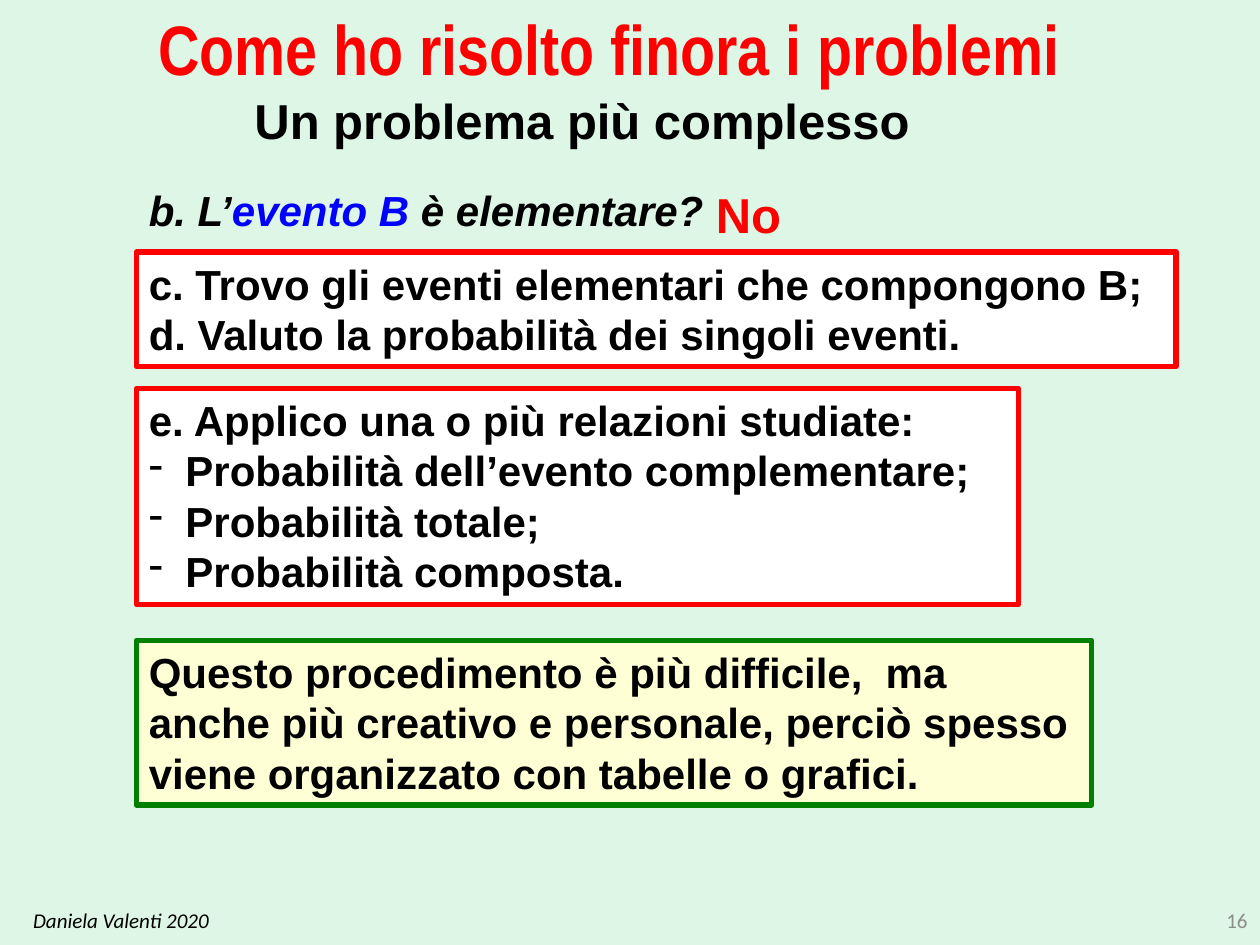
from lxml import etree
from pptx import Presentation
from pptx.dml.color import RGBColor
from pptx.enum import shapes, text
from pptx.oxml import ns
from pptx.util import Cm, Pt

RED, BLACK, GREEN = "FF0000", "000000", "008000"
LEFT = Cm(2.75)


def colour(value):
    return RGBColor.from_string(value)


def write(box, lines, size, ink, font="Arial", bold=True, italic=False,
          align=text.PP_ALIGN.LEFT, anchor=text.MSO_ANCHOR.TOP, wrap=True):
    """Fill a box with paragraphs that share one format."""
    frame = box.text_frame
    frame.word_wrap = wrap
    frame.vertical_anchor = anchor
    frame.text = "\n".join(lines)
    for para in frame.paragraphs:
        para.alignment = align
        para.font.name = font
        para.font.size = Pt(size)
        para.font.bold = bold
        para.font.italic = italic
        para.font.color.rgb = colour(ink)
    return frame


deck = Presentation()
deck.slide_width, deck.slide_height = Cm(25.4), Cm(19.05)
page = deck.slides.add_slide(deck.slide_layouts[5])
page.background.fill.solid()
page.background.fill.fore_color.rgb = colour("DEF6E5")

# Title and subtitle
title = page.shapes.title
title.left, title.top, title.width, title.height = Cm(0.64), Cm(0), Cm(23.29), Cm(1.9)
write(title, ["Come ho risolto finora i problemi"], 40, RED, "Arial Narrow",
      align=text.PP_ALIGN.CENTER, anchor=text.MSO_ANCHOR.MIDDLE)
subtitle = page.shapes.add_textbox(Cm(4.88), Cm(1.7), Cm(13.87), Cm(1.45))
write(subtitle, ["Un problema più complesso"], 28, BLACK, wrap=False)

# Question and answer
question = page.shapes.add_textbox(LEFT, Cm(3.6), Cm(11.86), Cm(1.27))
para = write(question, [""], 24, BLACK, italic=True).paragraphs[0]
for words, ink in [("b. L’", BLACK), ("evento B", "0000FF"), (" è elementare?", BLACK)]:
    span = para.add_run()
    span.text = words
    span.font.color.rgb = colour(ink)
answer = page.shapes.add_textbox(Cm(14.18), Cm(3.6), Cm(2.34), Cm(1.45))
write(answer, ["No"], 28, RED)

# Framed steps and conclusion: top, width, height, fill, line, lines of text
panels = [
    (5.08, 20.96, 2.31, "FFFFFF", RED,
     ["c. Trovo gli eventi elementari che compongono B;",
      "d. Valuto la probabilità dei singoli eventi."]),
    (7.83, 17.78, 4.36, "FFFFFF", RED,
     ["e. Applico una o più relazioni studiate:",
      "Probabilità dell’evento complementare;",
      "Probabilità totale;",
      "Probabilità composta."]),
    (12.91, 19.26, 3.32, "FEFFD5", GREEN,
     ["Questo procedimento è più difficile,  ma anche più creativo e personale, "
      "perciò spesso viene organizzato con tabelle o grafici."]),
]
for top, width, height, fill, line, lines in panels:
    panel = page.shapes.add_shape(shapes.MSO_SHAPE.RECTANGLE, LEFT, Cm(top),
                                  Cm(width), Cm(height))
    panel.shadow.inherit = False
    panel.fill.solid()
    panel.fill.fore_color.rgb = colour(fill)
    panel.line.color.rgb = colour(line)
    panel.line.width = Pt(3)
    frame = write(panel, lines, 24, BLACK)

    # Dashes before the relations
    if lines[0].startswith("e."):
        for para in frame.paragraphs[1:]:
            props = para._p.get_or_add_pPr()
            props.set("marL", str(Cm(0.74)))
            props.set("indent", str(-Cm(0.74)))
            dash = etree.Element(ns.qn("a:buChar"), char="-")
            props.insert_element_before(dash, "a:tabLst", "a:defRPr", "a:extLst")

# Footer
author = page.shapes.add_textbox(Cm(0), Cm(18.03), Cm(4.88), Cm(1.02))
write(author, ["Daniela Valenti 2020"], 12, BLACK, "Calibri", bold=False, italic=True,
      align=text.PP_ALIGN.CENTER, anchor=text.MSO_ANCHOR.MIDDLE)
number = page.shapes.add_textbox(Cm(24.13), Cm(18.03), Cm(1.27), Cm(1.02))
write(number, ["16"], 12, "8C8C8C", "Calibri", bold=False,
      align=text.PP_ALIGN.RIGHT, anchor=text.MSO_ANCHOR.MIDDLE)

deck.save("out.pptx")
